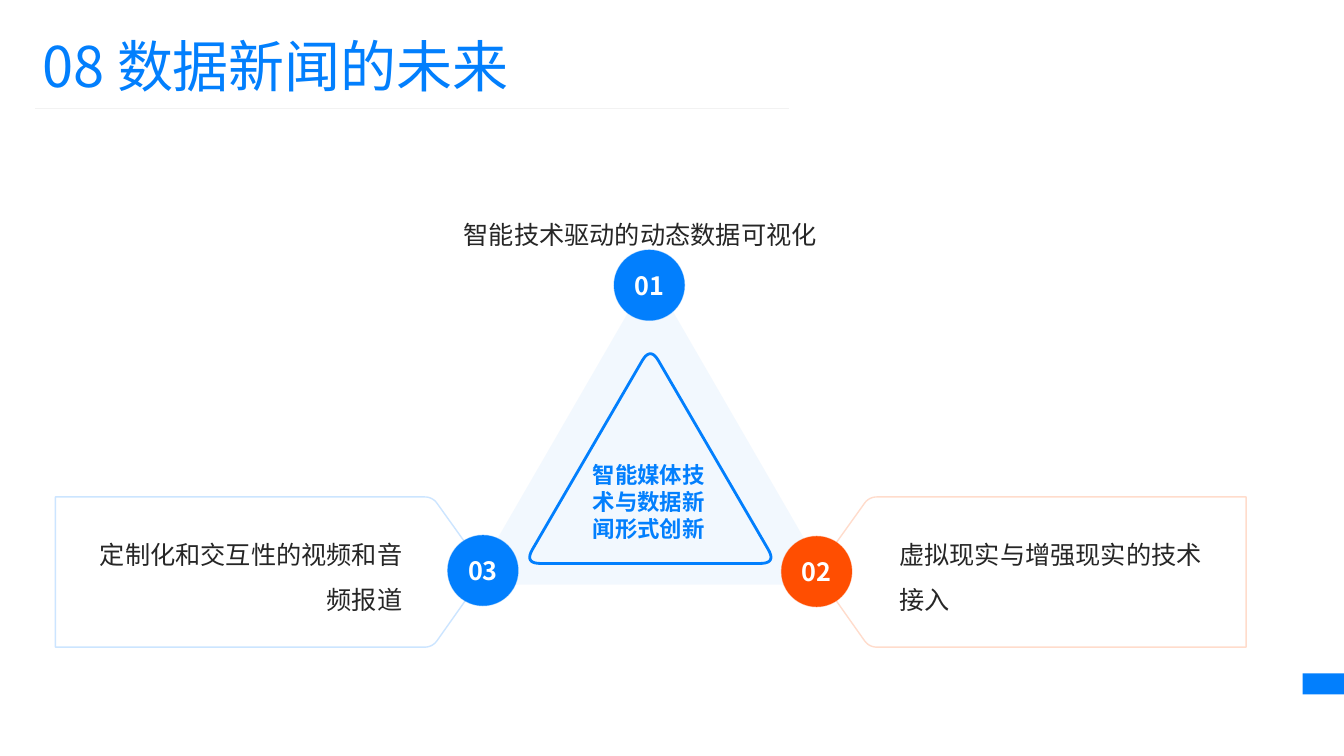
from dataclasses import dataclass
from lxml.etree import SubElement
from pptx import Presentation
from pptx.dml.color import RGBColor
from pptx.enum.shapes import MSO_CONNECTOR, MSO_SHAPE
from pptx.enum.text import MSO_ANCHOR, PP_ALIGN
from pptx.oxml.ns import qn
from pptx.util import Inches, Pt


@dataclass(frozen=True)
class Theme:
    font: str = "Noto Sans CJK SC"
    blue: str = "027FFD"
    orange: str = "FF4E01"
    pale_blue: str = "CCE5FF"
    pale_orange: str = "FFDCCC"
    rule: str = "F2F2F2"
    ink: str = "262626"
    white: str = "FFFFFF"
    title: int = 40
    body: int = 18
    core: int = 16


THEME = Theme()


def set_alpha(fill, percent):
    color = fill._xPr.find(qn("a:solidFill"))[0]
    SubElement(color, qn("a:alpha"), val=str(percent * 1000))


def paint(shape, fill=None, fill_alpha=None, line=None, weight=1, line_alpha=None):
    shape.shadow.inherit = False
    if fill:
        shape.fill.solid()
        shape.fill.fore_color.rgb = RGBColor.from_string(fill)
        if fill_alpha:
            set_alpha(shape.fill, fill_alpha)
    else:
        shape.fill.background()
    if line:
        shape.line.color.rgb = RGBColor.from_string(line)
        shape.line.width = Pt(weight)
        if line_alpha:
            set_alpha(shape.line.fill, line_alpha)
    else:
        shape.line.fill.background()


def write(box, text, size=THEME.body, color=THEME.ink, bold=False,
          align=PP_ALIGN.LEFT, anchor=MSO_ANCHOR.MIDDLE, spacing=None,
          insets=(0, 0, 0, 0)):
    frame = box.text_frame
    frame.word_wrap = True
    frame.vertical_anchor = anchor
    (frame.margin_left, frame.margin_top,
     frame.margin_right, frame.margin_bottom) = map(Inches, insets)
    para = frame.paragraphs[0]
    para.alignment = align
    if spacing:
        para.line_spacing = spacing
    span = para.add_run()
    span.text = text
    span.font.size = Pt(size)
    span.font.bold = bold
    span.font.color.rgb = RGBColor.from_string(color)
    span.font.name = THEME.font
    SubElement(span._r.get_or_add_rPr(), qn("a:ea"), typeface=THEME.font)


def add_label(page, left, top, width, height, text, **text_format):
    box = page.shapes.add_textbox(*map(Inches, (left, top, width, height)))
    write(box, text, **text_format)


def add_preset(page, kind, left, top, width, height, **look):
    shape = page.shapes.add_shape(kind, *map(Inches, (left, top, width, height)))
    paint(shape, **look)
    return shape


def add_rule(page, left, right, y):
    rule = page.shapes.add_connector(
        MSO_CONNECTOR.STRAIGHT, Inches(left), Inches(y), Inches(right), Inches(y))
    rule.line.color.rgb = RGBColor.from_string(THEME.rule)
    rule.line.width = Pt(0.5)
    SubElement(rule._element.spPr, qn("a:effectLst"))


def toward(start, end, distance):
    dx, dy = end[0] - start[0], end[1] - start[1]
    share = distance / (dx * dx + dy * dy) ** 0.5
    return start[0] + dx * share, start[1] + dy * share


def round_corner(before, corner, after, trim, steps=10):
    if not trim:
        return [corner]
    first, last = toward(corner, before, trim), toward(corner, after, trim)
    return [
        tuple((1 - t) ** 2 * a + 2 * t * (1 - t) * b + t * t * c
              for a, b, c in zip(first, corner, last))
        for t in (step / steps for step in range(steps + 1))]


def add_rounded_polygon(page, corners, trims, **look):
    count = len(corners)
    points = []
    for index, (corner, trim) in enumerate(zip(corners, trims)):
        points += round_corner(
            corners[index - 1], corner, corners[(index + 1) % count], trim)
    points = [(Inches(x), Inches(y)) for x, y in points]
    builder = page.shapes.build_freeform(*points[0])
    builder.add_line_segments(points[1:], close=True)
    shape = builder.convert_to_shape()
    paint(shape, **look)
    return shape


def add_wing(page, text, color, mirrored=False):
    corners = [(0.55, 4.93), (0.55, 6.42), (4.29, 6.42), (4.82, 5.67), (4.29, 4.93)]
    insets = (0.35, 0, 0.8, 0.05)
    if mirrored:
        corners = [(12.91 - x, y) for x, y in corners]
        insets = (0.8, 0, 0.35, 0.05)
    wing = add_rounded_polygon(page, corners, (0, 0, 0.08, 0.1, 0.08), line=color)
    write(wing, text, spacing=1.5, insets=insets,
          align=PP_ALIGN.LEFT if mirrored else PP_ALIGN.RIGHT)


def add_badge(page, left, top, number, color):
    badge = add_preset(page, MSO_SHAPE.OVAL, left, top, 0.7, 0.7,
                       fill=color, line=color, weight=0.75, line_alpha=40)
    write(badge, number, color=THEME.white, bold=True, align=PP_ALIGN.CENTER)


def add_core(page, text):
    core = add_rounded_polygon(
        page, [(5.2, 5.59), (6.45, 3.44), (7.7, 5.59)], (0.16, 0.16, 0.16),
        line=THEME.blue, weight=2)
    write(core, text, size=THEME.core, color=THEME.blue, bold=True,
          align=PP_ALIGN.CENTER, insets=(0.54, 1, 0.57, 0.15))


def main():
    deck = Presentation()
    deck.slide_width, deck.slide_height = Inches(13.33), Inches(7.5)
    page = deck.slides.add_slide(deck.slide_layouts[6])

    add_preset(page, MSO_SHAPE.RECTANGLE, 12.92, 6.68, 0.41, 0.21, fill=THEME.blue)
    add_label(page, 0.33, 0.26, 7.68, 0.77, "08 数据新闻的未来",
              size=THEME.title, color=THEME.blue, insets=(0.09, 0, 0.1, 0))
    add_rule(page, 0.35, 7.83, 1.08)

    add_preset(page, MSO_SHAPE.ISOSCELES_TRIANGLE, 4.67, 2.71, 3.57, 3.09,
               fill=THEME.blue, fill_alpha=5)
    add_wing(page, "定制化和交互性的视频和音频报道", THEME.pale_blue)
    add_badge(page, 4.44, 5.31, "03", THEME.blue)
    add_wing(page, "虚拟现实与增强现实的技术接入", THEME.pale_orange, mirrored=True)
    add_label(page, 3.48, 1.55, 5.73, 1.3, "智能技术驱动的动态数据可视化",
              anchor=MSO_ANCHOR.BOTTOM, insets=(1.12, 0, 0.12, 0.44))
    add_badge(page, 6.09, 2.48, "01", THEME.blue)
    add_badge(page, 7.75, 5.32, "02", THEME.orange)
    add_core(page, "智能媒体技术与数据新闻形式创新")

    deck.save("out.pptx")


if __name__ == "__main__":
    main()
